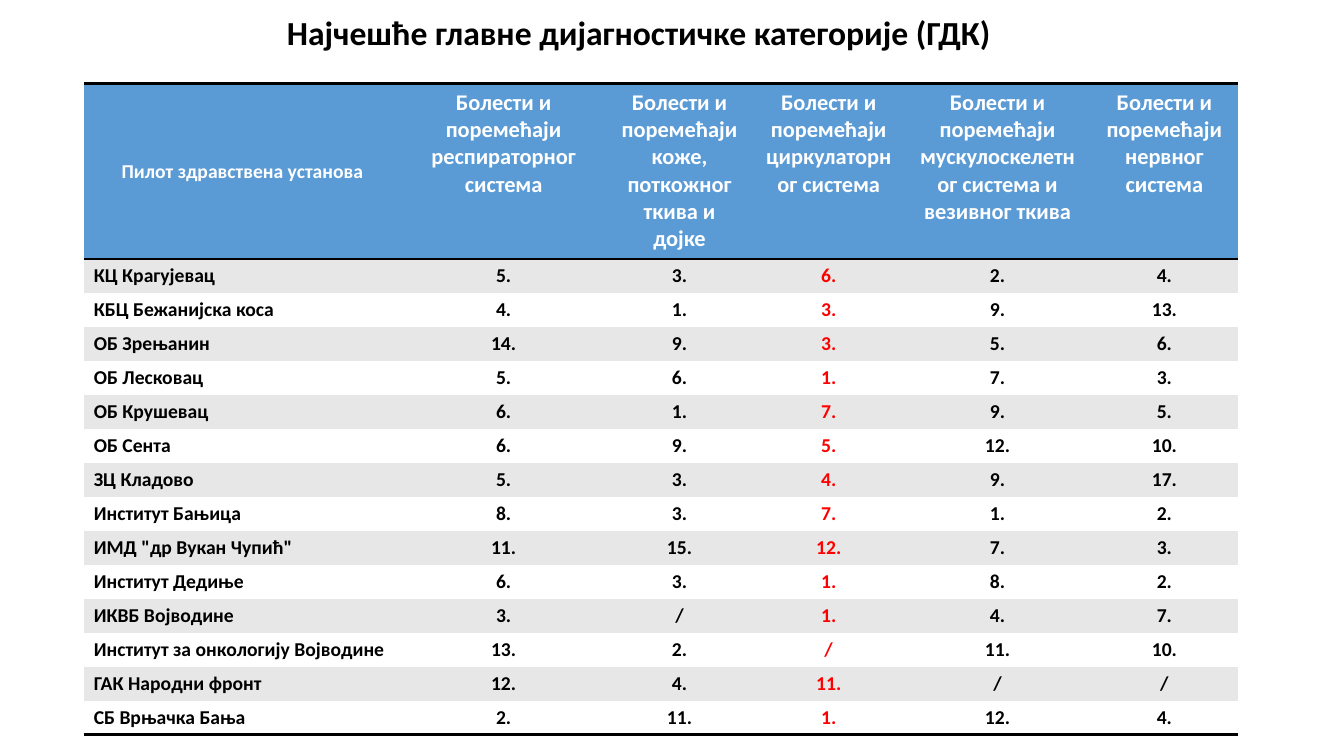
from dataclasses import dataclass

from lxml.etree import SubElement
from pptx import Presentation
from pptx.dml.color import RGBColor
from pptx.enum.text import MSO_ANCHOR as Anchor, MSO_AUTO_SIZE as AutoSize, PP_ALIGN as Align
from pptx.oxml.ns import qn
from pptx.util import Emu, Inches, Pt

BLACK = RGBColor(0x00, 0x00, 0x00)
WHITE = RGBColor(0xFF, 0xFF, 0xFF)
RED = RGBColor(0xFF, 0x00, 0x00)
BLUE = RGBColor(0x5B, 0x9B, 0xD5)
GREY = RGBColor(0xE7, 0xE7, 0xE7)

FONT = "Calibri"
SLIDE_W, SLIDE_H = Inches(13.33), Inches(7.5)
PLAIN_TABLE = "{2D5ABB26-0587-4C30-8999-92F81FD0307C}"
RULE_WIDTH = Pt(2)
RED_COLUMN = 3

# Percent of slide width and height
COLUMNS = (23.63, 15.23, 10.95, 11.25, 13.88, 10.95)
HEADER_ROW, BODY_ROW = 23.2, 4

TITLE = "Најчешће главне дијагностичке категорије (ГДК)"
HEADERS = (
    "Пилот здравствена установа",
    "Болести и поремећаји респираторног система",
    "Болести и поремећаји коже, поткожног ткива и дојке",
    "Болести и поремећаји циркулаторног система",
    "Болести и поремећаји мускулоскелетног система и везивног ткива",
    "Болести и поремећаји нервног система",
)


@dataclass
class Institution:
    name: str
    ranks: str


INSTITUTIONS = (
    Institution("КЦ Крагујевац", "5. 3. 6. 2. 4."),
    Institution("КБЦ Бежанијска коса", "4. 1. 3. 9. 13."),
    Institution("ОБ Зрењанин", "14. 9. 3. 5. 6."),
    Institution("ОБ Лесковац", "5. 6. 1. 7. 3."),
    Institution("ОБ Крушевац", "6. 1. 7. 9. 5."),
    Institution("ОБ Сента", "6. 9. 5. 12. 10."),
    Institution("ЗЦ Кладово", "5. 3. 4. 9. 17."),
    Institution("Институт Бањица", "8. 3. 7. 1. 2."),
    Institution('ИМД "др Вукан Чупић"', "11. 15. 12. 7. 3."),
    Institution("Институт Дедиње", "6. 3. 1. 8. 2."),
    Institution("ИКВБ Војводине", "3. / 1. 4. 7."),
    Institution("Институт за онкологију Војводине", "13. 2. / 11. 10."),
    Institution("ГАК Народни фронт", "12. 4. 11. / /"),
    Institution("СБ Врњачка Бања", "2. 11. 1. 12. 4."),
)


@dataclass
class CellStyle:
    size: int
    color: RGBColor
    fill: RGBColor
    align: Align = Align.CENTER
    anchor: Anchor = Anchor.TOP
    rules: tuple[str, ...] = ()


def across(percent: float) -> Emu:
    return Emu(round(SLIDE_W * percent / 100))


def down(percent: float) -> Emu:
    return Emu(round(SLIDE_H * percent / 100))


def set_text(tf, text: str, size: int, color: RGBColor, align: Align):
    """Write one bold paragraph and return it."""
    p = tf.paragraphs[0]
    p.alignment = align
    r = p.add_run()
    r.text = text
    for key, value in dict(name=FONT, size=Pt(size), bold=True).items():
        setattr(r.font, key, value)
    r.font.color.rgb = color
    return p


def add_rule(cell, side: str) -> None:
    """Draw a black border on one side ("lnT" or "lnB")."""
    ln = SubElement(cell._tc.get_or_add_tcPr(), qn(f"a:{side}"), w=str(RULE_WIDTH))
    SubElement(SubElement(ln, qn("a:solidFill")), qn("a:srgbClr"), val=str(BLACK))


def fill_cell(cell, text: str, style: CellStyle) -> None:
    for side in style.rules:
        add_rule(cell, side)
    cell.fill.solid()
    cell.fill.fore_color.rgb = style.fill
    cell.vertical_anchor = style.anchor
    set_text(cell.text_frame, text, style.size, style.color, style.align)


def add_title(slide) -> None:
    sp = slide.shapes.title
    place = dict(left=across(6.9), top=down(1.33), width=across(81.25), height=down(6.53))
    for key, value in place.items():
        setattr(sp, key, value)
    tf = sp.text_frame
    frame = dict(word_wrap=True, auto_size=AutoSize.NONE, vertical_anchor=Anchor.MIDDLE)
    for key, value in frame.items():
        setattr(tf, key, value)
    set_text(tf, TITLE, 24, BLACK, Align.CENTER).line_spacing = 0.9


def add_rank_table(slide) -> None:
    count = len(INSTITUTIONS)
    height = HEADER_ROW + count * BODY_ROW
    table = slide.shapes.add_table(
        count + 1, len(COLUMNS), across(6.23), down(11.07), across(sum(COLUMNS)), down(height)
    ).table
    table.horz_banding = False
    table._tbl.tblPr.find(qn("a:tableStyleId")).text = PLAIN_TABLE
    for column, width in zip(table.columns, COLUMNS):
        column.width = across(width)
    for i, row in enumerate(table.rows):
        row.height = down(BODY_ROW if i else HEADER_ROW)

    # Header row
    for c, text in enumerate(HEADERS):
        style = CellStyle(16, WHITE, BLUE, rules=("lnT", "lnB"))
        if c == 0:
            style.size, style.anchor = 14, Anchor.MIDDLE
        fill_cell(table.cell(0, c), text, style)

    # Banded body rows, closed by a rule
    for i, institution in enumerate(INSTITUTIONS, start=1):
        for c, text in enumerate((institution.name, *institution.ranks.split())):
            style = CellStyle(
                14,
                RED if c == RED_COLUMN else BLACK,
                GREY if i % 2 else WHITE,
                align=Align.CENTER if c else Align.LEFT,
                rules=("lnB",) if i == count else (),
            )
            fill_cell(table.cell(i, c), text, style)


def main() -> None:
    prs = Presentation()
    prs.slide_width, prs.slide_height = SLIDE_W, SLIDE_H
    slide = prs.slides.add_slide(prs.slide_layouts[5])
    add_title(slide)
    add_rank_table(slide)
    prs.save("out.pptx")


if __name__ == "__main__":
    main()
